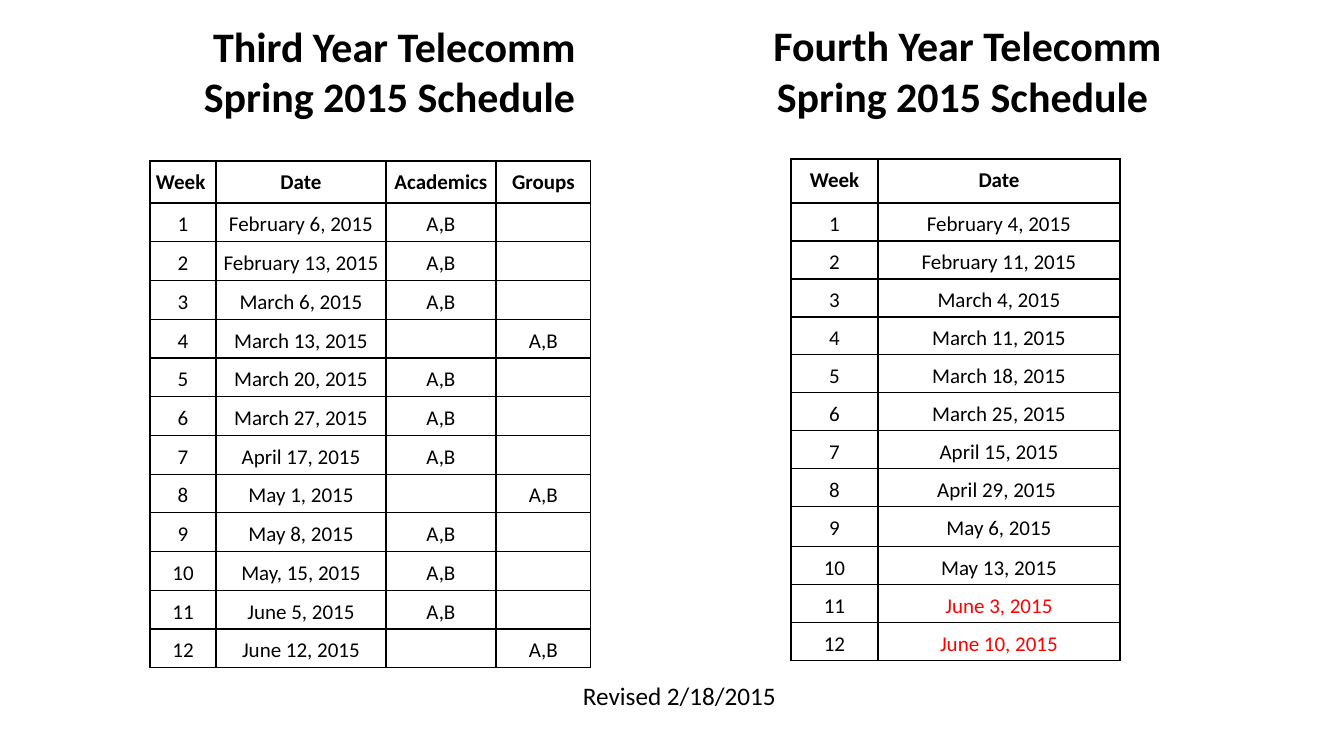
from lxml.etree import SubElement
from pptx import Presentation
from pptx.dml.color import RGBColor
from pptx.enum.text import MSO_ANCHOR as Anchor, PP_ALIGN as Align
from pptx.oxml.ns import qn
from pptx.util import Pt

SCALE = 914400 / 100.8
COLORS = {"ink": "000000", "paper": "FFFFFF", "alert": "FF0000"}

THIRD = ["February 6, 2015", "February 13, 2015", "March 6, 2015",
         "March 13, 2015", "March 20, 2015", "March 27, 2015",
         "April 17, 2015", "May 1, 2015", "May 8, 2015",
         "May, 15, 2015", "June 5, 2015", "June 12, 2015"]
FOURTH = ["February 4, 2015", "February 11, 2015", "March 4, 2015",
          "March 11, 2015", "March 18, 2015", "March 25, 2015",
          "April 15, 2015", "April 29, 2015 ", "May 6, 2015",
          "May 13, 2015", "June 3, 2015", "June 10, 2015"]


def px(n):
    return round(n * SCALE)


def rgb(name):
    return RGBColor.from_string(COLORS[name])


def write(frame, text, size, color="ink", bold=False, align=Align.CENTER,
          line=None, after=None):
    """Fill a text frame, one paragraph per line of text."""
    for i, words in enumerate(text.split("\n")):
        para = frame.paragraphs[0] if i == 0 else frame.add_paragraph()
        para.alignment = align
        if line:
            para.line_spacing = line
        if after:
            para.space_after = Pt(after)
        if words:
            run = para.add_run()
            run.text = words
            font = run.font
            font.name, font.size, font.bold = "Calibri", Pt(size), bold
            font.color.rgb = rgb(color)


def label(slide, box, text, size, shape=None, **style):
    """Place text in the box, in the given placeholder or a new text box."""
    box = [px(n) for n in box]
    shape = shape or slide.shapes.add_textbox(*box)
    shape.left, shape.top, shape.width, shape.height = box
    frame = shape.text_frame
    frame.word_wrap = True
    frame.vertical_anchor = Anchor.TOP
    write(frame, text, size, **style)


def border(cell):
    props = cell._tc.get_or_add_tcPr()
    for i, side in enumerate(("a:lnL", "a:lnR", "a:lnT", "a:lnB")):
        line = SubElement(props, qn(side), w=str(Pt(1)))
        fill = SubElement(line, qn("a:solidFill"))
        SubElement(fill, qn("a:srgbClr"), val=COLORS["ink"])
        props.insert(i, line)


def schedule(slide, left, top, widths, heights, rows, alerts=()):
    """Draw a table with a bold first row; dates of alert weeks are red."""
    size = [px(n) for n in (left, top, sum(widths), sum(heights))]
    table = slide.shapes.add_table(len(rows), len(widths), *size).table
    table.first_row = table.horz_banding = False
    for col, width in zip(table.columns, widths):
        col.width = px(width)
    for r, (row, height) in enumerate(zip(rows, heights)):
        table.rows[r].height = px(height)
        for c, text in enumerate(row):
            cell = table.cell(r, c)
            cell.margin_left = cell.margin_right = px(4)
            cell.margin_top = cell.margin_bottom = px(4)
            cell.fill.solid()
            cell.fill.fore_color.rgb = rgb("paper")
            border(cell)
            color = "alert" if c == 1 and r in alerts else "ink"
            write(cell.text_frame, text, 15, color=color, bold=r == 0,
                  line=1.19, after=6)


def third_year(slide):
    label(slide, (88, 15, 613, 112),
          "Third Year Telecomm\nSpring 2015 Schedule ", 30,
          shape=slide.shapes.title, bold=True)
    rows = [("Week ", "Date", "Academics", "Groups")]
    for week, date in enumerate(THIRD, 1):
        marks = ("", "A,B") if week % 4 == 0 else ("A,B", "")
        rows.append((str(week), date, *marks))
    schedule(slide, 150, 161, (66, 170, 110, 95), [42] + [38] * 12, rows)


def fourth_year(slide):
    label(slide, (661, 15, 613, 112),
          "Fourth Year Telecomm\nSpring 2015 Schedule ", 30, bold=True)
    rows = [("Week", "Date")]
    rows += [(str(week), date) for week, date in enumerate(FOURTH, 1)]
    heights = [44] + [38] * 8 + [40] + [38] * 3
    schedule(slide, 791, 159, (87, 242), heights, rows, alerts=(11, 12))


def main():
    deck = Presentation()
    deck.slide_width, deck.slide_height = px(1344), px(756)
    slide = deck.slides.add_slide(deck.slide_layouts[5])
    third_year(slide)
    fourth_year(slide)
    label(slide, (573, 675, 221, 40), "Revised 2/18/2015", 18,
          align=Align.LEFT)
    deck.save("out.pptx")


if __name__ == "__main__":
    main()
